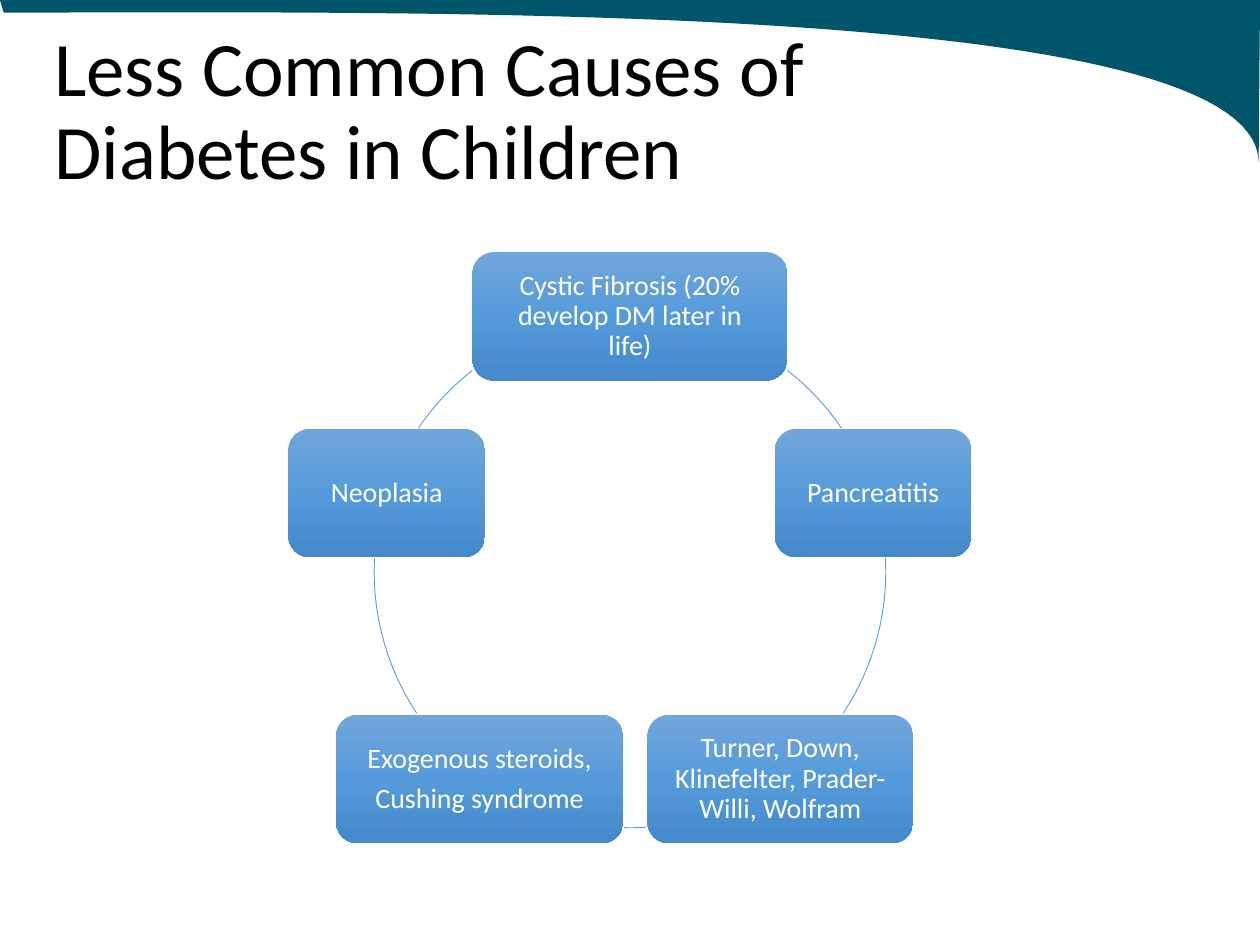
"""Build a slide with five less common causes of diabetes set round a ring."""
from copy import deepcopy
from dataclasses import dataclass
from math import cos, radians, sin

from pptx import Presentation
from pptx.dml.color import RGBColor
from pptx.enum.shapes import MSO_SHAPE
from pptx.enum.text import MSO_ANCHOR, MSO_AUTO_SIZE, PP_ALIGN
from pptx.oxml.ns import qn
from pptx.shapes.shapetree import GroupShapes
from pptx.slide import Slide
from pptx.text.text import TextFrame
from pptx.util import Inches, Pt

Point = tuple[float, float]


@dataclass(frozen=True)
class Theme:
    font: str = "Calibri"
    head: float = 44
    body: float = 16
    ink: str = "000000"
    pale: str = "FFFFFF"
    wave: str = "00556A"
    ring: str = "5B9BD5"
    fade: tuple[str, ...] = ("71A6DB", "559BDB", "448ACA")


@dataclass(frozen=True)
class Cause:
    lines: tuple[str, ...]
    cols: float


@dataclass(frozen=True)
class Arc:
    start: float
    end: float


THEME = Theme()
COLS, ROWS = 100, 75
MID_X, MID_Y, RADIUS = 50, 45.4, 20.3
NODE_ROWS = 10.2
CAUSES = (
    Cause(("Cystic Fibrosis (20% develop DM later in life)",), 25),
    Cause(("Pancreatitis",), 15.6),
    Cause(("Turner, Down, Klinefelter, Prader-Willi, Wolfram",), 21.1),
    Cause(("Exogenous steroids,", "Cushing syndrome"), 22.8),
    Cause(("Neoplasia",), 15.6),
)
ARCS = (Arc(308, 325.8), Arc(356.9, 33.5), Arc(86.3, 91.4),
        Arc(146.5, 183.1), Arc(214.2, 232))


def unit(count: float) -> int:
    return Inches(count / 10)


def color(code: str) -> RGBColor:
    return RGBColor.from_string(code)


def curve(a: Point, b: Point, c: Point, d: Point, steps: int = 60) -> list[Point]:
    points = []
    for step in range(1, steps + 1):
        t = step / steps
        parts = ((1 - t) ** 3, 3 * t * (1 - t) ** 2, 3 * t * t * (1 - t), t ** 3)
        x, y = (sum(p * v for p, v in zip(parts, axis)) for axis in zip(a, b, c, d))
        points.append((unit(x), unit(y)))
    return points


def draw_wave(slide: Slide) -> None:
    tip = (99.9, 12.9)
    pen = slide.shapes.build_freeform(0, 0)
    pen.add_line_segments(
        [(unit(COLS), 0)]
        + curve((COLS, 0), (COLS, 1.4), (99.9, 11.5), tip)
        + curve(tip, (99.8, 0), (33.6, 1), (0.3, 1)))
    wave = pen.convert_to_shape()
    wave.shadow.inherit = False
    wave.fill.solid()
    wave.fill.fore_color.rgb = color(THEME.wave)
    wave.line.fill.background()
    slide.shapes._spTree.insert(2, wave._element)


def write(frame: TextFrame, lines: tuple[str, ...], size: float, code: str,
          align: PP_ALIGN, after: float = 0) -> None:
    frame.text = "\n".join(lines)
    frame.word_wrap = True
    frame.auto_size = MSO_AUTO_SIZE.NONE
    frame.vertical_anchor = MSO_ANCHOR.MIDDLE
    for para in frame.paragraphs:
        para.alignment = align
        para.line_spacing = 0.9
        para.space_before = Pt(0)
        para.space_after = Pt(after)
        para.font.name = THEME.font
        para.font.size = Pt(size)
        para.font.color.rgb = color(code)


def draw_title(slide: Slide) -> None:
    title = slide.shapes.title
    title.left, title.top, title.width, title.height = map(unit, (3.3, 1.7, 80, 14.5))
    write(title.text_frame, ("Less Common Causes of Diabetes in Children",),
          THEME.head, THEME.ink, PP_ALIGN.LEFT)


def draw_arc(shapes: GroupShapes, arc: Arc) -> None:
    side = unit(2 * RADIUS)
    shape = shapes.add_shape(MSO_SHAPE.ARC, unit(MID_X - RADIUS),
                             unit(MID_Y - RADIUS), side, side)
    for index, angle in enumerate((arc.start, arc.end)):
        shape.adjustments[index] = angle * 0.6
    shape.shadow.inherit = False
    shape.fill.background()
    shape.line.color.rgb = color(THEME.ring)
    shape.line.width = Pt(0.5)


def draw_node(shapes: GroupShapes, cause: Cause, angle: float) -> None:
    x = MID_X + RADIUS * cos(radians(angle))
    y = MID_Y + RADIUS * sin(radians(angle))
    node = shapes.add_shape(
        MSO_SHAPE.ROUNDED_RECTANGLE, unit(x - cause.cols / 2),
        unit(y - NODE_ROWS / 2), unit(cause.cols), unit(NODE_ROWS))
    node.shadow.inherit = False
    node.line.fill.background()
    node.fill.gradient()
    node.fill.gradient_angle = 270
    stops = node._element.spPr.find(".//" + qn("a:gsLst"))
    stops.append(deepcopy(stops[0]))
    for index, (stop, code) in enumerate(zip(node.fill.gradient_stops, THEME.fade)):
        stop.position = index / 2
        stop.color.rgb = color(code)
    frame = node.text_frame
    frame.margin_left = frame.margin_right = unit(1.2)
    frame.margin_top = frame.margin_bottom = unit(1.2)
    write(frame, cause.lines, THEME.body, THEME.pale, PP_ALIGN.CENTER,
          THEME.body * 0.35)


def main() -> None:
    deck = Presentation()
    deck.slide_width, deck.slide_height = unit(COLS), unit(ROWS)
    slide = deck.slides.add_slide(deck.slide_layouts[5])
    draw_wave(slide)
    draw_title(slide)
    shapes = slide.shapes.add_group_shape().shapes
    for index, (cause, arc) in enumerate(zip(CAUSES, ARCS)):
        draw_node(shapes, cause, index * 360 / len(CAUSES) - 90)
        draw_arc(shapes, arc)
    deck.save("out.pptx")


if __name__ == "__main__":
    main()
